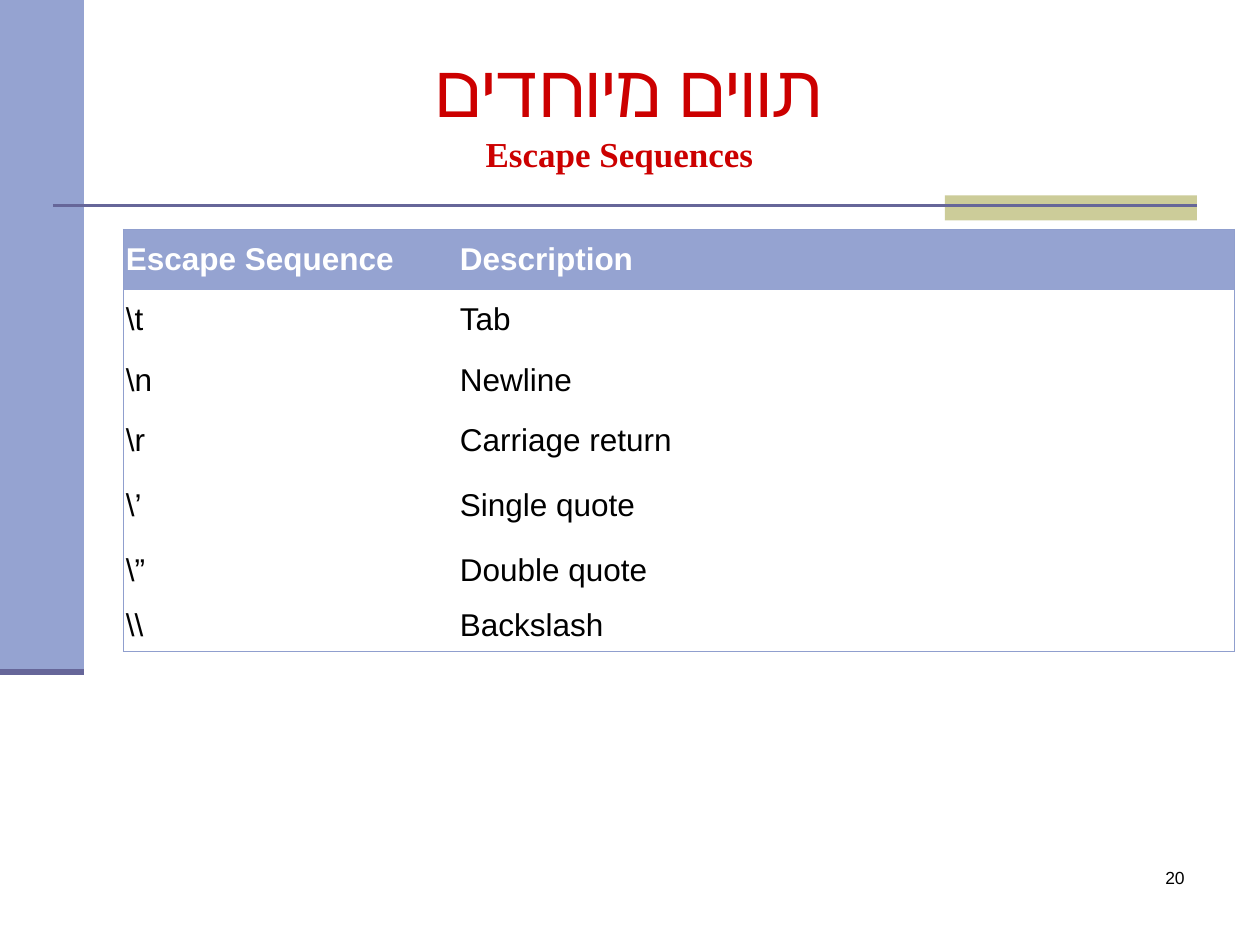
import copy

import pptx
import pptx.dml.color
import pptx.enum.shapes
import pptx.enum.text
import pptx.oxml
import pptx.oxml.ns
import pptx.util
from lxml import etree

Inches = pptx.util.Inches
Pt = pptx.util.Pt
ALIGN = pptx.enum.text.PP_ALIGN
MIDDLE = pptx.enum.text.MSO_ANCHOR.MIDDLE
qn = pptx.oxml.ns.qn
rgb = pptx.dml.color.RGBColor.from_string

PERIWINKLE, BORDER, RULE, SAND, RED = "95A3D1", "909FCE", "666699", "CCCC99", "CC0000"
NO_STYLE = "{2D5ABB26-0587-4C30-8999-92F81FD0307C}"


def write(paragraph, text, size=18, font="Arial", color="000000", bold=False, align=None):
    run = paragraph.add_run()
    run.text = text
    run.font.size, run.font.name, run.font.bold = Pt(size), font, bold
    run.font.color.rgb = rgb(color)
    if align is not None:
        paragraph.alignment = align
    return run


def draw_border(cell, side):
    """Draw one side (L, R, T or B) of a table cell."""
    line = etree.Element(qn(f"a:ln{side}"), w=str(Pt(0.75)))
    fill = etree.SubElement(line, qn("a:solidFill"))
    etree.SubElement(fill, qn("a:srgbClr"), val=BORDER)
    props = cell._tc.get_or_add_tcPr()
    props.insert(len(props.findall("*")), line)


deck = pptx.Presentation()
deck.slide_width, deck.slide_height = Inches(10), Inches(7.5)
slide = deck.slides.add_slide(deck.slide_layouts[5])
shapes = slide.shapes

# Side band, accent block and rules
column = deck.slide_width // 15
band_bottom = Inches(5.33)
for color, box in [
    (PERIWINKLE, (0, 0, column, band_bottom)),
    (SAND, (Inches(7.5), Inches(1.55), Inches(2), Inches(0.2))),
]:
    block = shapes.add_shape(pptx.enum.shapes.MSO_SHAPE.RECTANGLE, *box)
    block.shadow.inherit = False
    block.fill.solid()
    block.fill.fore_color.rgb = rgb(color)
    block.line.fill.background()

for left, right, y, width in [
    (Inches(0.42), Inches(9.5), Inches(1.63), 1.5),
    (0, column, band_bottom, 3.5),
]:
    rule = shapes.add_connector(pptx.enum.shapes.MSO_CONNECTOR.STRAIGHT, left, y, right, y)
    rule.line.color.rgb = rgb(RULE)
    rule.line.width = Pt(width)
    etree.SubElement(rule._element.spPr, qn("a:effectLst"))

# Title in two sizes, right to left
title = shapes.title
title.left, title.top, title.width, title.height = column, Inches(0.44), Inches(8.5), Inches(0.85)
title.text_frame.vertical_anchor = MIDDLE
title.text_frame.auto_size = pptx.enum.text.MSO_AUTO_SIZE.NONE
heading = title.text_frame.paragraphs[0]
hebrew = write(heading, "תווים מיוחדים ", size=42, font="Times New Roman", color=RED, align=ALIGN.CENTER)
heading.add_line_break()
heading._p.find(qn("a:br")).append(copy.deepcopy(hebrew._r.rPr))
write(heading, "Escape Sequences", size=20, font="Times New Roman", color=RED, bold=True)
heading._p.get_or_add_pPr().set("rtl", "1")

# Slide number
page_number = shapes.add_textbox(Inches(7.42), Inches(6.83), Inches(2.08), Inches(0.5)).text_frame
page_number.word_wrap = True
write(page_number.paragraphs[0], "20", size=10, align=ALIGN.RIGHT)

# Escape sequences
sequences = [
    ("Escape Sequence", "Description"),
    (r"\t", "Tab"),
    (r"\n", "Newline"),
    (r"\r", "Carriage return"),
    (r"\’", "Single quote"),
    (r"\”", "Double quote"),
    (r"\\", "Backslash"),
]
row_heights = [0.48] * 4 + [0.55, 0.47, 0.41]
table = shapes.add_table(
    len(sequences), 2, Inches(0.98), Inches(1.82), Inches(8.82), Inches(sum(row_heights))
).table
table.first_row = table.horz_banding = False
table._tbl.tblPr.find(qn("a:tableStyleId")).text = NO_STYLE
for table_column, width in zip(table.columns, (2.65, 6.17)):
    table_column.width = Inches(width)

last = len(sequences) - 1
for r, (texts, height) in enumerate(zip(sequences, row_heights)):
    table.rows[r].height = Inches(height)
    is_header = r == 0
    for c, text in enumerate(texts):
        cell = table.cell(r, c)
        cell.margin_left = cell.margin_right = cell.margin_top = cell.margin_bottom = Inches(0.02)
        cell.vertical_anchor = MIDDLE
        write(cell.text_frame.paragraphs[0], text, color="FFFFFF" if is_header else "000000",
              bold=is_header, align=ALIGN.LEFT)
        draw_border(cell, "R" if c else "L")
        if is_header:
            draw_border(cell, "T")
        if r == last:
            draw_border(cell, "B")
        if is_header:
            cell.fill.solid()
            cell.fill.fore_color.rgb = rgb(PERIWINKLE)
        else:
            cell.fill.background()

deck.save("out.pptx")
